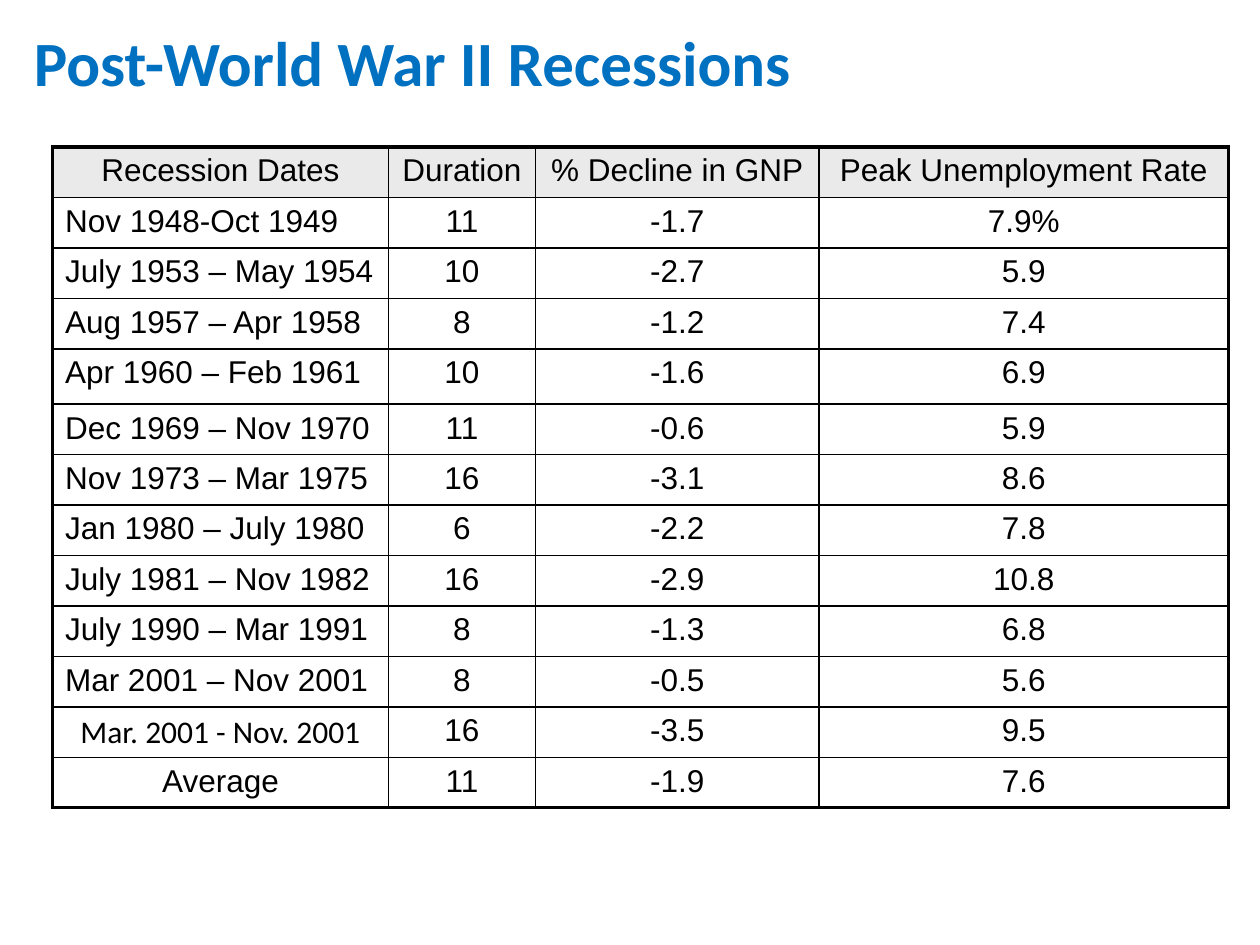
from lxml import etree
from pptx import Presentation
from pptx.dml.color import RGBColor
from pptx.enum import text as t
from pptx.oxml import ns
from pptx.util import Pt

BLUE = RGBColor(0x00, 0x70, 0xC0)
BLACK = RGBColor(0x00, 0x00, 0x00)
HEADER_GREY = RGBColor(0xEA, 0xEA, 0xEA)
LEFT, CENTER = t.PP_ALIGN.LEFT, t.PP_ALIGN.CENTER


def write(frame, words, size=18, font="Arial", color=BLACK, bold=False,
          align=CENTER, line_spacing=1.0):
    paragraph = frame.paragraphs[0]
    paragraph.alignment = align
    paragraph.line_spacing = line_spacing
    run = paragraph.add_run()
    run.text = words
    run.font.size = Pt(size)
    run.font.name = font
    run.font.bold = bold
    run.font.color.rgb = color


def add_border(cell, side, width):
    line = etree.SubElement(cell._tc.get_or_add_tcPr(), ns.qn(f"a:ln{side}"),
                            w=str(Pt(width)))
    fill = etree.SubElement(line, ns.qn("a:solidFill"))
    etree.SubElement(fill, ns.qn("a:srgbClr"), val=str(BLACK))


prs = Presentation()
prs.slide_width, prs.slide_height = Pt(720), Pt(540)
slide = prs.slides.add_slide(prs.slide_layouts[6])

# Title
title = slide.shapes.add_textbox(Pt(12.24), Pt(17.28), Pt(684), Pt(43.2)).text_frame
title.word_wrap = True
title.vertical_anchor = t.MSO_ANCHOR.MIDDLE
write(title, "Post-World War II Recessions", size=36, font="Calibri",
      color=BLUE, bold=True, align=LEFT, line_spacing=0.8)

# Recession data
recessions = [
    ("Recession Dates", "Duration", "% Decline in GNP", "Peak Unemployment Rate"),
    ("Nov 1948-Oct 1949", "11", "-1.7", "7.9%"),
    ("July 1953 – May 1954", "10", "-2.7", "5.9"),
    ("Aug 1957 – Apr 1958", "8", "-1.2", "7.4"),
    ("Apr 1960 – Feb 1961", "10", "-1.6", "6.9"),
    ("Dec 1969 – Nov 1970", "11", "-0.6", "5.9"),
    ("Nov 1973 – Mar 1975", "16", "-3.1", "8.6"),
    ("Jan 1980 – July 1980", "6", "-2.2", "7.8"),
    ("July 1981 – Nov 1982", "16", "-2.9", "10.8"),
    ("July 1990 – Mar 1991", "8", "-1.3", "6.8"),
    ("Mar 2001 – Nov 2001", "8", "-0.5", "5.6"),
    ("Mar. 2001 - Nov. 2001", "16", "-3.5", "9.5"),
    ("Average", "11", "-1.9", "7.6"),
]
column_widths = [192, 84, 162, 234]
row_heights = [28.8] * len(recessions)
row_heights[4] = 31.68
last_row, last_col = len(recessions) - 1, len(column_widths) - 1
latest_row = last_row - 1

# Table grid
table = slide.shapes.add_table(
    len(recessions), len(column_widths), Pt(30), Pt(84),
    Pt(sum(column_widths)), Pt(sum(row_heights))).table
for column, width in zip(table.columns, column_widths):
    column.width = Pt(width)
for row, height in zip(table.rows, row_heights):
    row.height = Pt(height)

# Cells: heavy outer frame, thin inner rules, grey header
for r, recession in enumerate(recessions):
    for c, words in enumerate(recession):
        cell = table.cell(r, c)
        outer_edges = {"L": c == 0, "R": c == last_col, "T": r == 0, "B": r == last_row}
        for side, is_outer in outer_edges.items():
            add_border(cell, side, 2.25 if is_outer else 1)
        if r == 0:
            cell.fill.solid()
            cell.fill.fore_color.rgb = HEADER_GREY
        else:
            cell.fill.background()
        is_date = c == 0 and 0 < r < latest_row
        write(cell.text_frame, words, align=LEFT if is_date else CENTER,
              font="Calibri" if (r, c) == (latest_row, 0) else "Arial")

prs.save("out.pptx")
